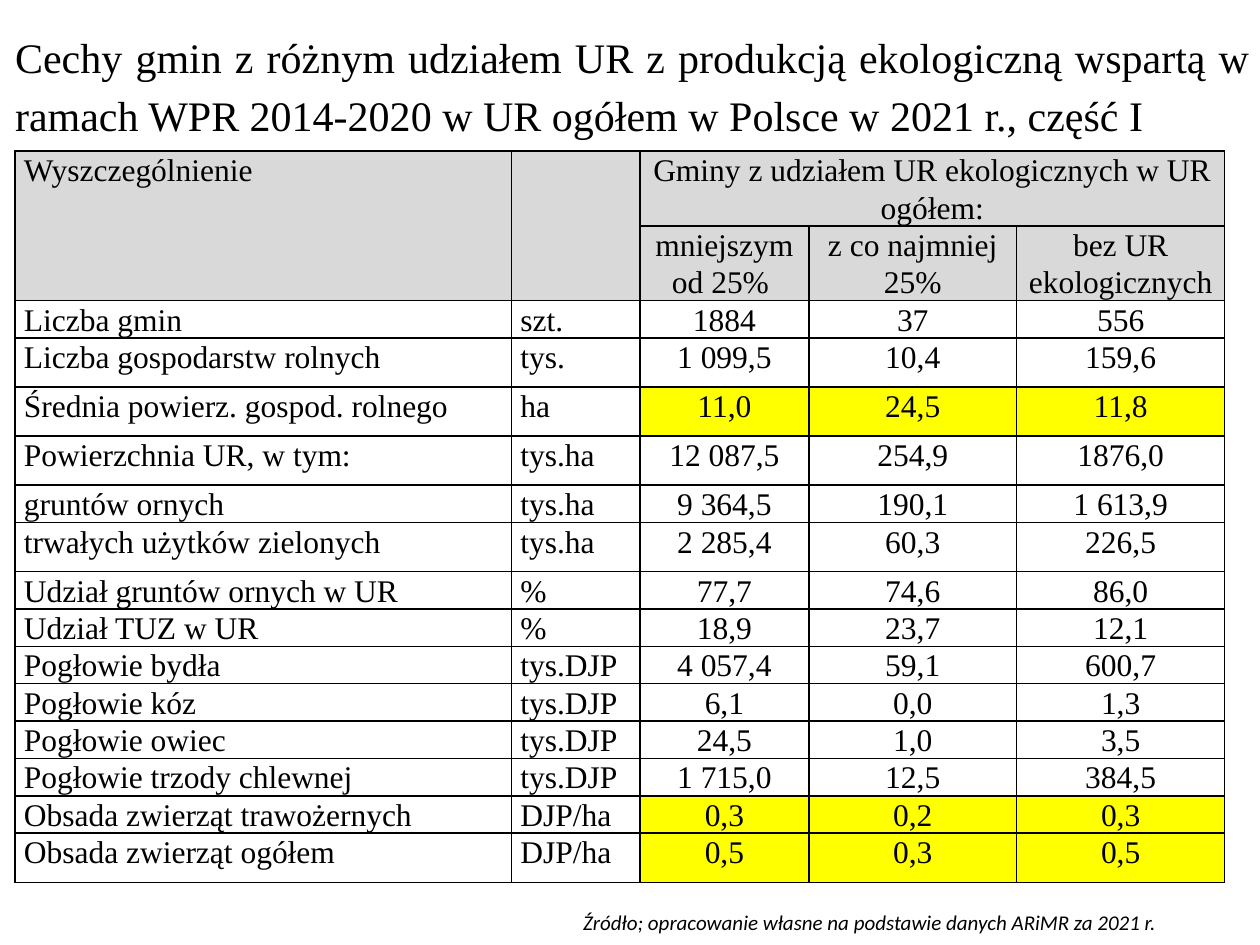
from lxml.etree import SubElement
from pptx import Presentation
from pptx.dml.color import RGBColor
from pptx.enum.text import MSO_ANCHOR, MSO_AUTO_SIZE, PP_ALIGN
from pptx.oxml.ns import qn
from pptx.util import Inches, Pt

SERIF = "Times New Roman"
BLACK, GREY, YELLOW = "000000", "D9D9D9", "FFFF00"
COLUMN_WIDTHS = [3.94, 1.02, 1.34, 1.65, 1.65]
HEADER_HEIGHT, SHORT, TALL = 0.59, 0.29, 0.39

TITLE = ("Cechy gmin z różnym udziałem UR z produkcją ekologiczną wspartą w "
         "ramach WPR 2014-2020 w UR ogółem w Polsce w 2021 r., część I")
SOURCE = "Źródło; opracowanie własne na podstawie danych ARiMR za 2021 r."
HEADER = [
    ["Wyszczególnienie", "", "Gminy z udziałem UR ekologicznych w UR ogółem:", "", ""],
    ["", "", "mniejszym od 25% ", "z co najmniej 25%", "bez UR ekologicznych"],
]
# Row height, colour of the values, label, unit, three values
DATA = [
    (SHORT, None, "Liczba gmin", "szt.", "1884", "37", "556"),
    (TALL, None, "Liczba gospodarstw rolnych", "tys.", "1 099,5", "10,4", "159,6"),
    (TALL, YELLOW, "Średnia powierz. gospod. rolnego", "ha", "11,0", "24,5", "11,8"),
    (TALL, None, "Powierzchnia UR, w tym:", "tys.ha", "12 087,5", "254,9", "1876,0"),
    (SHORT, None, "gruntów ornych", "tys.ha", "9 364,5", "190,1", "1 613,9"),
    (TALL, None, "trwałych użytków zielonych", "tys.ha", "2 285,4", "60,3", "226,5"),
    (SHORT, None, "Udział gruntów ornych w UR", "%", "77,7", "74,6", "86,0"),
    (SHORT, None, "Udział TUZ w UR", "%", "18,9", "23,7", "12,1"),
    (SHORT, None, "Pogłowie bydła", "tys.DJP", "4 057,4", "59,1", "600,7"),
    (SHORT, None, "Pogłowie kóz", "tys.DJP", "6,1", "0,0", "1,3"),
    (SHORT, None, "Pogłowie owiec", "tys.DJP", "24,5", "1,0", "3,5"),
    (SHORT, None, "Pogłowie trzody chlewnej", "tys.DJP", "1 715,0", "12,5", "384,5"),
    (SHORT, YELLOW, "Obsada zwierząt trawożernych", "DJP/ha", "0,3", "0,2", "0,3"),
    (TALL, YELLOW, "Obsada zwierząt ogółem", "DJP/ha", "0,5", "0,3", "0,5"),
]


def color(value):
    return RGBColor.from_string(value)


def write(text_frame, text, font_name, size, alignment, line_spacing=1.0, space_after=0):
    paragraph = text_frame.paragraphs[0]
    paragraph.text = text
    paragraph.alignment = alignment
    paragraph.line_spacing = line_spacing
    paragraph.space_before = Pt(0)
    paragraph.space_after = Pt(space_after)
    paragraph.font.name = font_name
    paragraph.font.size = Pt(size)
    paragraph.font.color.rgb = color(BLACK)
    return paragraph


def add_borders(cell):
    properties = cell._tc.get_or_add_tcPr()
    for side in ("a:lnL", "a:lnR", "a:lnT", "a:lnB"):
        line = SubElement(properties, qn(side), w=str(Pt(1)))
        fill = SubElement(line, qn("a:solidFill"))
        SubElement(fill, qn("a:srgbClr"), val=BLACK)


def format_cell(cell, text, fill, alignment):
    cell.margin_left = cell.margin_right = Inches(0.07)
    cell.margin_top = cell.margin_bottom = 0
    add_borders(cell)
    if fill:
        cell.fill.solid()
        cell.fill.fore_color.rgb = color(fill)
    else:
        cell.fill.background()
    write(cell.text_frame, text, SERIF, 18, alignment, 1.07, 8)


def place_title(slide, left, top, width, height):
    title = slide.shapes.title
    title.left, title.top, title.width, title.height = map(Inches, (left, top, width, height))
    title.text_frame.word_wrap = True
    title.text_frame.auto_size = MSO_AUTO_SIZE.NONE
    title.text_frame.vertical_anchor = MSO_ANCHOR.TOP
    write(title.text_frame, TITLE, SERIF, 24, PP_ALIGN.JUSTIFY, 1.15, 12)


def add_data_table(slide, left, top):
    heights = [HEADER_HEIGHT] * len(HEADER) + [row[0] for row in DATA]
    fills = [[GREY] * 5 for _ in HEADER] + [[None] * 2 + [row[1]] * 3 for row in DATA]
    texts = HEADER + [row[2:] for row in DATA]
    table = slide.shapes.add_table(
        len(texts), len(COLUMN_WIDTHS), Inches(left), Inches(top),
        Inches(sum(COLUMN_WIDTHS)), Inches(sum(heights))).table
    table.first_row = table.horz_banding = False
    for column, width in zip(table.columns, COLUMN_WIDTHS):
        column.width = Inches(width)
    for row, height, row_texts, row_fills in zip(table.rows, heights, texts, fills):
        row.height = Inches(height)
        for index, (cell, text, fill) in enumerate(zip(row.cells, row_texts, row_fills)):
            format_cell(cell, text, fill, PP_ALIGN.LEFT if index < 2 else PP_ALIGN.CENTER)
    for first, last in (((0, 0), (1, 0)), ((0, 1), (1, 1)), ((0, 2), (0, 4))):
        table.cell(*first).merge(table.cell(*last))


def add_source(slide, left, top, width, height):
    box = slide.shapes.add_textbox(*map(Inches, (left, top, width, height)))
    box.text_frame.word_wrap = True
    write(box.text_frame, SOURCE, "Calibri", 12, PP_ALIGN.LEFT).font.italic = True


def main():
    presentation = Presentation()
    presentation.slide_width, presentation.slide_height = Inches(10), Inches(7.5)
    slide = presentation.slides.add_slide(presentation.slide_layouts[5])
    place_title(slide, 0.02, 0.14, 10, 0.99)
    add_data_table(slide, 0.12, 1.2)
    add_source(slide, 4.53, 7.17, 6.06, 0.3)
    presentation.save("out.pptx")


if __name__ == "__main__":
    main()
